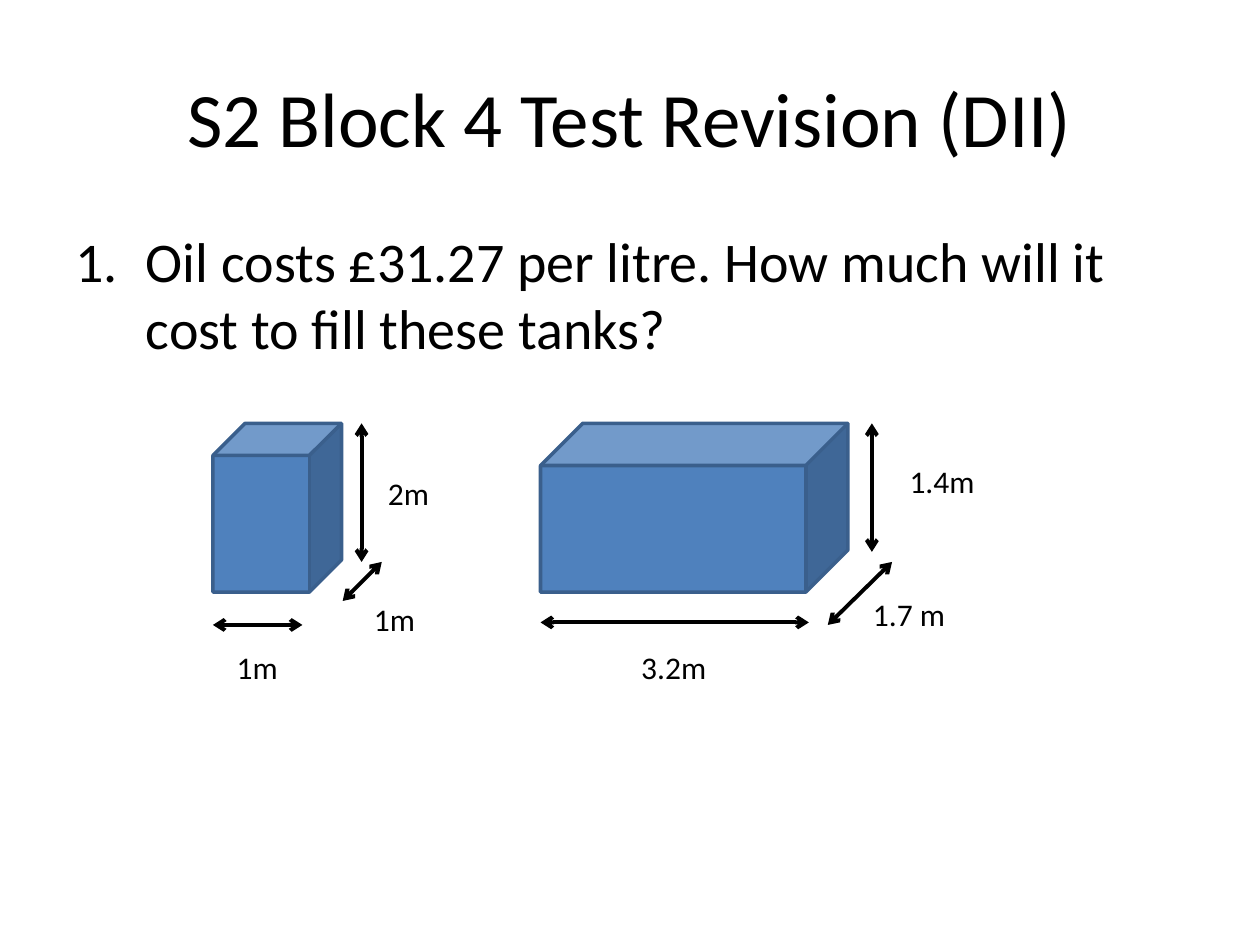
"""Build a revision slide with two oil tanks and their dimensions."""
from lxml.etree import SubElement
from pptx import Presentation
from pptx.dml.color import RGBColor
from pptx.enum.shapes import MSO_CONNECTOR as Connector, MSO_SHAPE as Shape
from pptx.enum.text import MSO_ANCHOR as Anchor, MSO_AUTO_SIZE as AutoSize, PP_ALIGN as Align
from pptx.oxml.ns import qn
from pptx.util import Inches, Pt

COLOURS = {"text": "000000", "tank": "4F81BD", "edge": "3A5F8C"}
FONT = "Calibri"
TITLE = "S2 Block 4 Test Revision (DII)"
QUESTION = "Oil costs £31.27 per litre. How much will it cost to fill these tanks?"
TANK_TOP, TANK_HEIGHT = 3.36, 1.34
LABEL_HEIGHT, WIDTH_LABEL_TOP = 0.4, 5.09

TANKS = [
    {
        "left": 1.69, "width": 1.02,
        "arrows": [(1.69, 4.96, 2.4, 4.96), (2.87, 4.46, 2.87, TANK_TOP), (2.72, 4.77, 3.03, 4.46)],
        "labels": [("1m", 1.78, WIDTH_LABEL_TOP, 0.53), ("2m", 2.98, 3.71, 0.53), ("1m", 2.87, 4.71, 0.53)],
    },
    {
        "left": 4.29, "width": 2.44,
        "arrows": [(4.29, 4.94, 6.42, 4.94), (6.92, TANK_TOP, 6.92, 4.38), (6.57, 4.96, 7.08, 4.46)],
        "labels": [("3.2m", 4.99, WIDTH_LABEL_TOP, 0.72), ("1.4m", 7.12, 3.62, 0.72), ("1.7 m", 6.83, 4.67, 0.78)],
    },
]


def colour(name):
    return RGBColor.from_string(COLOURS[name])


def add_text(page, text, place, size, para_format=None, **frame_format):
    box = page.shapes.add_textbox(*map(Inches, place))
    for name, value in {"word_wrap": True, "auto_size": AutoSize.NONE, **frame_format}.items():
        setattr(box.text_frame, name, value)
    para = box.text_frame.paragraphs[0]
    for name, value in (para_format or {}).items():
        setattr(para, name, value)
    span = para.add_run()
    span.text = text
    for name, value in {"name": FONT, "size": Pt(size)}.items():
        setattr(span.font, name, value)
    span.font.color.rgb = colour("text")
    return para


def number_paragraph(para, indent):
    properties = para._p.get_or_add_pPr()
    properties.set("marL", str(Inches(indent)))
    properties.set("indent", str(-Inches(indent)))
    SubElement(properties, qn("a:buFont"), typeface="+mj-lt")
    SubElement(properties, qn("a:buAutoNum"), type="arabicPeriod")


def add_tank(page, left, width):
    tank = page.shapes.add_shape(Shape.CUBE, *map(Inches, (left, TANK_TOP, width, TANK_HEIGHT)))
    tank.shadow.inherit = False
    tank.fill.solid()
    tank.fill.fore_color.rgb = colour("tank")
    tank.line.color.rgb = colour("edge")
    tank.line.width = Pt(2)


def add_arrow(page, ends):
    arrow = page.shapes.add_connector(Connector.STRAIGHT, *map(Inches, ends))
    arrow.line.color.rgb = colour("text")
    arrow.line.width = Pt(2.25)
    for end in ("a:headEnd", "a:tailEnd"):
        SubElement(arrow.line._get_or_add_ln(), qn(end), type="arrow")
    SubElement(arrow._element.spPr, qn("a:effectLst"))


def main():
    deck = Presentation()
    deck.slide_width, deck.slide_height = Inches(10), Inches(7.5)
    page = deck.slides.add_slide(deck.slide_layouts[6])
    add_text(page, TITLE, (0.5, 0.3, 9, 1.25), 44, {"alignment": Align.CENTER}, vertical_anchor=Anchor.MIDDLE)
    question = add_text(page, QUESTION, (0.5, 1.75, 9, 4.95), 32, {"space_before": Pt(6.4)})
    number_paragraph(question, 0.56)
    for tank in TANKS:
        add_tank(page, tank["left"], tank["width"])
        for ends in tank["arrows"]:
            add_arrow(page, ends)
        for text, left, top, width in tank["labels"]:
            add_text(page, text, (left, top, width, LABEL_HEIGHT), 18,
                     word_wrap=False, auto_size=AutoSize.SHAPE_TO_FIT_TEXT)
    deck.save("out.pptx")


if __name__ == "__main__":
    main()
